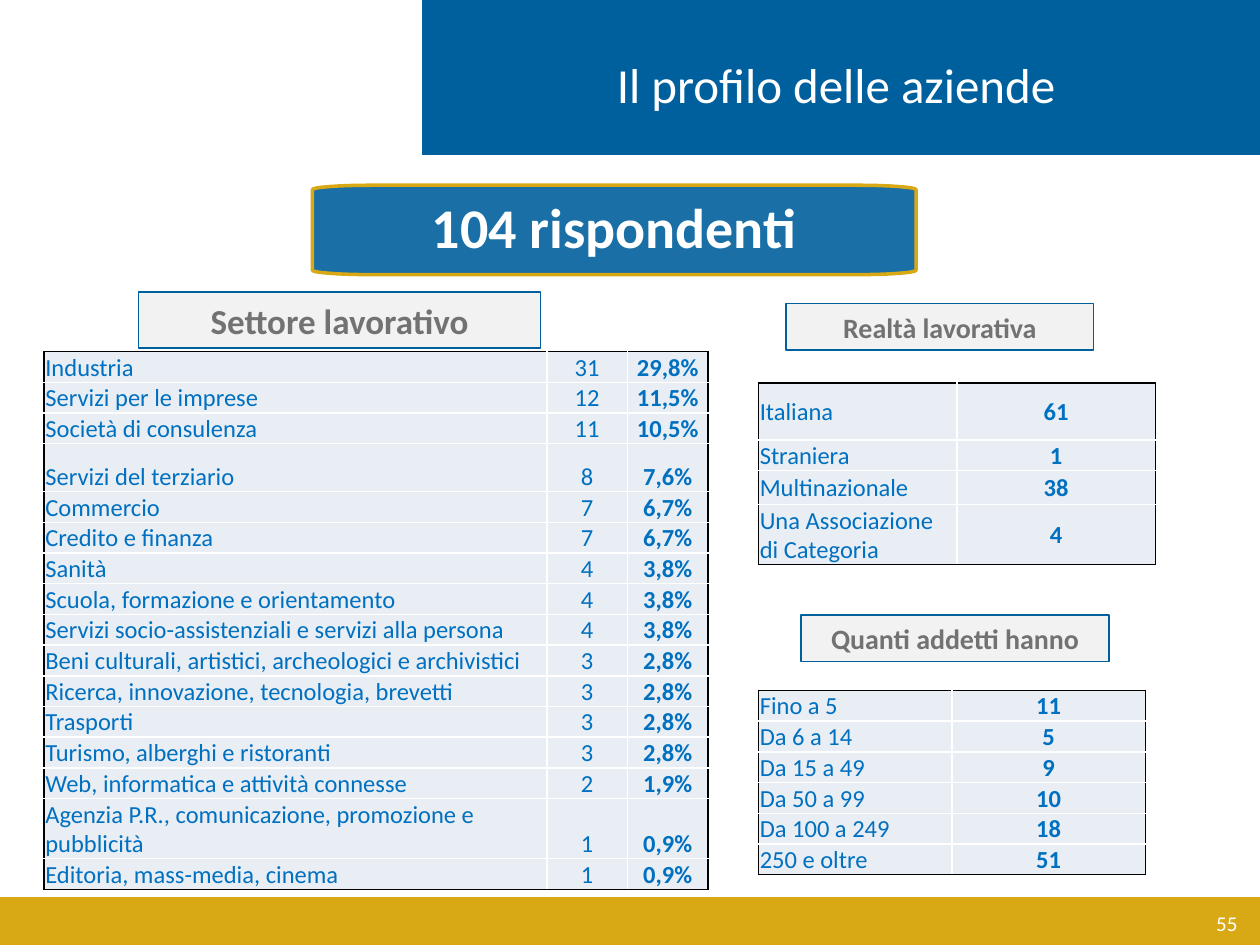
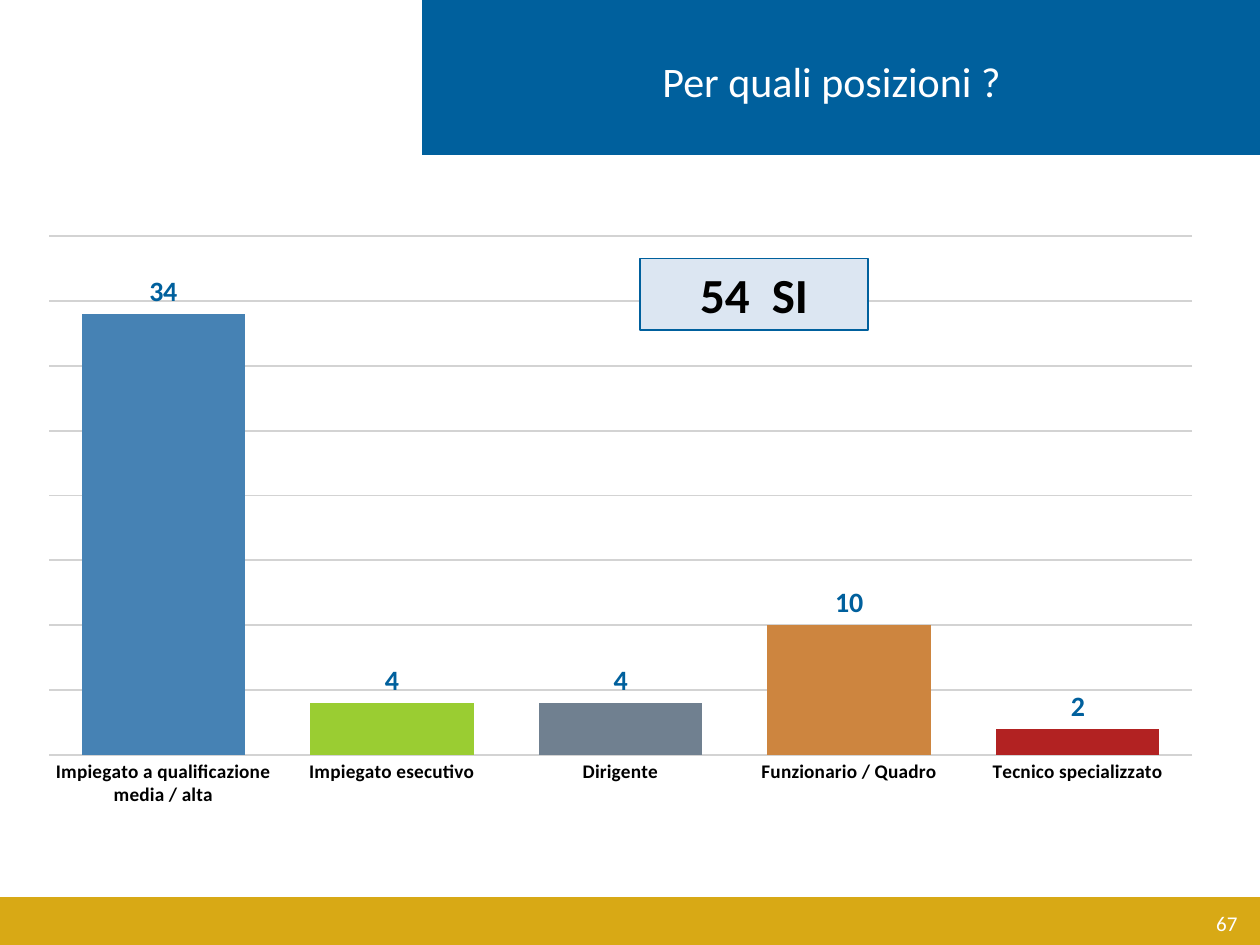
"""Build two survey slides: company profile tables and a chart of positions."""
import math
from dataclasses import dataclass, field

import lxml.etree
import pptx
import pptx.chart.data
import pptx.dml.color
import pptx.enum.chart
import pptx.enum.shapes
import pptx.enum.text
import pptx.oxml.ns
import pptx.slide
import pptx.util

COLS, ROWS = 100, 75
WIDTH, HEIGHT = pptx.util.Inches(10), pptx.util.Inches(7.5)
FONT = "Calibri"
BLUE, GOLD, WHITE, BLACK = "00609D", "D8A915", "FFFFFF", "000000"
GREY_TEXT, GREY_FILL, PALE_BLUE = "727272", "F2F2F2", "DCE6F2"
CELL_TEXT, CELL_FILL, GRID_LINE = "0070C0", "E9EDF4", "D3D3D3"
CENTER = pptx.enum.text.PP_ALIGN.CENTER
MIDDLE = pptx.enum.text.MSO_ANCHOR.MIDDLE
BOTTOM = pptx.enum.text.MSO_ANCHOR.BOTTOM


@dataclass(frozen=True)
class Box:
    """A place on the slide in grid columns and rows."""
    x: float
    y: float
    w: float
    h: float

    def emu(self) -> tuple[int, int, int, int]:
        """Return left, top, width and height in EMU."""
        return across(self.x), down(self.y), across(self.w), down(self.h)


@dataclass(frozen=True)
class Label:
    """A framed caption."""
    text: str
    box: Box
    size: int = 16
    color: str = GREY_TEXT
    fill: str = GREY_FILL
    line_width: float = 1


@dataclass(frozen=True)
class Grid:
    """A table with its column widths and the rows that are taller or not."""
    x: float
    y: float
    widths: tuple[float, ...]
    rows: list[tuple[str, ...]]
    anchor: pptx.enum.text.MSO_ANCHOR = BOTTOM
    row_height: float = 2.42
    heights: dict[int, float] = field(default_factory=dict)


LABELS = [
    Label("Settore lavorativo", Box(11, 23.2, 31.9, 4.4), 20),
    Label("Realtà lavorativa", Box(62.4, 24.1, 24.4, 3.7)),
    Label("Quanti addetti hanno", Box(63.6, 48.8, 24.4, 3.7)),
]
SECTORS = Grid(3.5, 27.9, (39.9, 6.4, 6.4), [
    ("Industria", "31", "29,8%"),
    ("Servizi per le imprese", "12", "11,5%"),
    ("Società di consulenza", "11", "10,5%"),
    ("Servizi del terziario", "8", "7,6%"),
    ("Commercio", "7", "6,7%"),
    ("Credito e finanza", "7", "6,7%"),
    ("Sanità", "4", "3,8%"),
    ("Scuola, formazione e orientamento", "4", "3,8%"),
    ("Servizi socio-assistenziali e servizi alla persona", "4", "3,8%"),
    ("Beni culturali, artistici, archeologici e archivistici", "3", "2,8%"),
    ("Ricerca, innovazione, tecnologia, brevetti", "3", "2,8%"),
    ("Trasporti", "3", "2,8%"),
    ("Turismo, alberghi e ristoranti", "3", "2,8%"),
    ("Web, informatica e attività connesse", "2", "1,9%"),
    ("Agenzia P.R., comunicazione, promozione e pubblicità", "1", "0,9%"),
    ("Editoria, mass-media, cinema", "1", "0,9%"),
], heights={3: 3.8, 14: 4.75})
OWNERSHIP = Grid(60.2, 30.4, (15.75, 15.75), [
    ("Italiana", "61"),
    ("Straniera", "1"),
    ("Multinazionale", "38"),
    ("Una Associazione di Categoria", "4"),
], anchor=MIDDLE, heights={0: 4.5, 2: 2.7, 3: 4.75})
STAFF = Grid(60.2, 54.8, (15.35, 15.35), [
    ("Fino a 5", "11"),
    ("Da 6 a 14", "5"),
    ("Da 15 a 49", "9"),
    ("Da 50 a 99", "10"),
    ("Da 100 a 249", "18"),
    ("250 e oltre", "51"),
])
POSITIONS = [
    ("Impiegato a qualificazione media / alta", 34, "4682B4"),
    ("Impiegato esecutivo", 4, "9ACD32"),
    ("Dirigente", 4, "708090"),
    ("Funzionario / Quadro", 10, "CD853F"),
    ("Tecnico specializzato", 2, "B22222"),
]


def across(n: float) -> int:
    """Turn grid columns into EMU."""
    return round(WIDTH * n / COLS)


def down(n: float) -> int:
    """Turn grid rows into EMU."""
    return round(HEIGHT * n / ROWS)


def rgb(color: str) -> pptx.dml.color.RGBColor:
    """Turn a hex string into a colour."""
    return pptx.dml.color.RGBColor.from_string(color)


def paint(sp, fill: str, line: str | None = None, width: float = 1) -> None:
    """Give a shape its fill and outline, and no shadow."""
    sp.shadow.inherit = False
    sp.fill.solid()
    sp.fill.fore_color.rgb = rgb(fill)
    if line:
        sp.line.color.rgb = rgb(line)
        sp.line.width = pptx.util.Pt(width)
    else:
        sp.line.fill.background()


def style_font(font, size: float, color: str, bold: bool = False) -> None:
    """Set face, size, colour and weight of a font."""
    font.name = FONT
    font.size = pptx.util.Pt(size)
    font.color.rgb = rgb(color)
    font.bold = bold


def write(tf, text: str, size: float, color: str, bold: bool = False,
          align=CENTER, anchor=MIDDLE):
    """Write one paragraph into a text frame and return it."""
    tf.word_wrap = True
    tf.vertical_anchor = anchor
    p = tf.paragraphs[0]
    p.text = text
    p.alignment = align
    style_font(p.font, size, color, bold)
    return p


def add_rect(s: pptx.slide.Slide, box: Box, fill: str,
             line: str | None = None, width: float = 1):
    """Draw a rectangle."""
    sp = s.shapes.add_shape(pptx.enum.shapes.MSO_SHAPE.RECTANGLE, *box.emu())
    paint(sp, fill, line, width)
    return sp


def add_label(s: pptx.slide.Slide, label: Label) -> None:
    """Draw a framed caption."""
    sp = add_rect(s, label.box, label.fill, BLUE, label.line_width)
    write(sp.text_frame, label.text, label.size, label.color, bold=True)


def add_page(prs, title: str, title_box: Box, size: float,
             number: int) -> pptx.slide.Slide:
    """Add a slide with its bands, title and number."""
    s = prs.slides.add_slide(prs.slide_layouts[5])
    add_rect(s, Box(0, 71.2, COLS, 3.8), GOLD)
    add_rect(s, Box(33.5, 0, 66.5, 12.3), BLUE)
    sp = s.shapes.title
    sp.left, sp.top, sp.width, sp.height = title_box.emu()
    write(sp.text_frame, title, size, WHITE)
    s.shapes.element.append(sp.element)
    tb = s.shapes.add_textbox(*Box(75.9, 71.3, 23.3, 4).emu())
    write(tb.text_frame, str(number), 12, WHITE,
          align=pptx.enum.text.PP_ALIGN.RIGHT)
    return s


def add_banner(s: pptx.slide.Slide, text: str, box: Box,
               rx: float, ry: float, steps: int = 8) -> None:
    """Draw a translucent banner whose corners are quarter ellipses."""
    points = []
    for quarter in range(4):
        side_x = 1 if quarter in (0, 3) else -1
        side_y = 1 if quarter in (0, 1) else -1
        for k in range(steps + 1):
            angle = (quarter + k / steps) * math.pi / 2
            x = box.x + box.w / 2 + side_x * (box.w / 2 - rx) + rx * math.cos(angle)
            y = box.y + box.h / 2 + side_y * (box.h / 2 - ry) + ry * math.sin(angle)
            points.append((across(x), down(y)))
    builder = s.shapes.build_freeform(*points[0])
    builder.add_line_segments(points[1:], close=True)
    sp = builder.convert_to_shape()
    paint(sp, BLUE, GOLD, 2)
    color = sp.element.spPr.find(pptx.oxml.ns.qn("a:solidFill"))[0]
    lxml.etree.SubElement(color, pptx.oxml.ns.qn("a:alpha"), val="90000")
    p = write(sp.text_frame, text, 32, WHITE, bold=True)
    p.line_spacing = 0.9


def add_border(cell, side: str, color: str) -> None:
    """Draw one side of a cell, named L, R, T or B."""
    qn = pptx.oxml.ns.qn
    tc_pr = cell._tc.get_or_add_tcPr()
    ln = lxml.etree.SubElement(tc_pr, qn(f"a:ln{side}"), w=str(pptx.util.Pt(1)))
    solid = lxml.etree.SubElement(ln, qn("a:solidFill"))
    lxml.etree.SubElement(solid, qn("a:srgbClr"), val=color)


def add_grid(s: pptx.slide.Slide, grid: Grid) -> None:
    """Draw a table framed in black and ruled in white."""
    heights = [grid.heights.get(i, grid.row_height) for i in range(len(grid.rows))]
    box = Box(grid.x, grid.y, sum(grid.widths), sum(heights))
    table = s.shapes.add_table(len(heights), len(grid.widths), *box.emu()).table
    table.first_row = table.horz_banding = False
    for column, width in zip(table.columns, grid.widths):
        column.width = across(width)
    last_row, last_col = len(heights) - 1, len(grid.widths) - 1
    for i, values in enumerate(grid.rows):
        table.rows[i].height = down(heights[i])
        for j, value in enumerate(values):
            cell = table.cell(i, j)
            outer = {"L": j == 0, "R": j == last_col, "T": i == 0, "B": i == last_row}
            for side, is_outer in outer.items():
                add_border(cell, side, BLACK if is_outer else WHITE)
            cell.fill.solid()
            cell.fill.fore_color.rgb = rgb(CELL_FILL)
            cell.margin_left = cell.margin_right = cell.margin_top = across(0.1)
            cell.margin_bottom = 0
            cell.vertical_anchor = grid.anchor
            p = cell.text_frame.paragraphs[0]
            p.text = value
            p.alignment = CENTER if j else pptx.enum.text.PP_ALIGN.LEFT
            style_font(p.font, 14, CELL_TEXT, bold=j == last_col)


def add_positions_chart(s: pptx.slide.Slide, box: Box) -> None:
    """Draw the column chart of positions, one colour each."""
    names, values, colors = zip(*POSITIONS)
    data = pptx.chart.data.CategoryChartData(number_format="0")
    data.categories = names
    data.add_series("Series 1", values)
    kind = pptx.enum.chart.XL_CHART_TYPE.COLUMN_CLUSTERED
    chart = s.shapes.add_chart(kind, *box.emu(), data).chart
    chart.has_legend = chart.has_title = False
    style_font(chart.font, 11, BLACK)
    axis = chart.category_axis
    axis.major_tick_mark = pptx.enum.chart.XL_TICK_MARK.INSIDE
    axis.format.line.fill.background()
    style_font(axis.tick_labels.font, 11, BLACK, bold=True)
    axis = chart.value_axis
    axis.visible = False
    axis.minimum_scale, axis.maximum_scale, axis.major_unit = 0, 40, 5
    axis.major_gridlines.format.line.color.rgb = rgb(GRID_LINE)
    axis.major_gridlines.format.line.width = pptx.util.Pt(1)
    plot = chart.plots[0]
    plot.gap_width = 40
    plot.vary_by_categories = False
    series = plot.series[0]
    for i, color in enumerate(colors):
        fill = series.points[i].format.fill
        fill.solid()
        fill.fore_color.rgb = rgb(color)
    labels = series.data_labels
    labels.show_value = True
    labels.position = pptx.enum.chart.XL_LABEL_POSITION.OUTSIDE_END
    style_font(labels.font, 16, BLUE, bold=True)


def main() -> None:
    """Build and save the presentation."""
    prs = pptx.Presentation()
    prs.slide_width, prs.slide_height = WIDTH, HEIGHT

    s = add_page(prs, "Il profilo delle aziende", Box(32.7, 3.8, 67.3, 5.7), 28, 55)
    add_banner(s, "104 rispondenti", Box(24.8, 14.7, 47.9, 7.1), 4.8, 0.35)
    for label in LABELS:
        add_label(s, label)
    for grid in (SECTORS, OWNERSHIP, STAFF):
        add_grid(s, grid)

    s = add_page(prs, "Per quali posizioni ?", Box(33.7, 0.1, 64.6, 12.6), 24, 67)
    add_positions_chart(s, Box(2, 17.8, 94.5, 47.2))
    add_label(s, Label("54  SI", Box(50.8, 20.5, 18.1, 5.7), 28, BLACK, PALE_BLUE, 0.75))

    prs.save("out.pptx")


if __name__ == "__main__":
    main()
